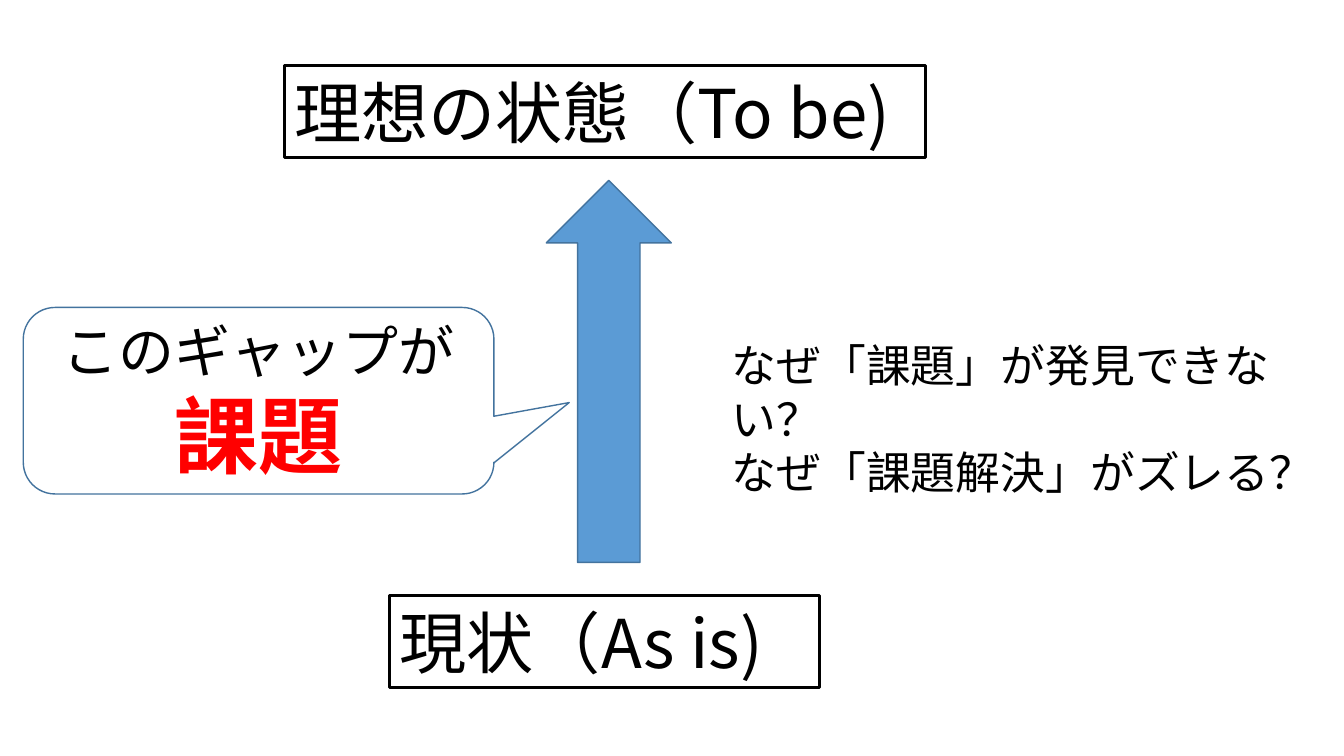
from dataclasses import dataclass

from pptx import Presentation
from pptx.dml.color import RGBColor
from pptx.enum.shapes import MSO_SHAPE as Shape
from pptx.enum.text import MSO_ANCHOR as Anchor, MSO_AUTO_SIZE as AutoSize, PP_ALIGN as Align
from pptx.util import Inches, Pt

SLIDE_WIDTH, SLIDE_HEIGHT = Inches(13.33), Inches(7.5)
STATE_CENTRE, STATE_HEIGHT = 45, 12.13


@dataclass(frozen=True)
class Theme:
    """Colours, fonts and type sizes of the slide."""
    ink: str = "000000"
    accent: str = "FF0000"
    arrow: str = "5B9BD5"
    outline: str = "43739E"
    japanese: str = "Noto Sans CJK JP"
    latin: str = "Calibri"
    state: int = 48
    gap: int = 40
    issue: int = 60
    question: int = 32


THEME = Theme()


def place(left, top, width, height):
    """Turn percentages of the slide into lengths."""
    return (int(SLIDE_WIDTH * left / 100), int(SLIDE_HEIGHT * top / 100),
            int(SLIDE_WIDTH * width / 100), int(SLIDE_HEIGHT * height / 100))


def add_outlined(slide, kind, area, line, weight, fill=None):
    """Add a flat shape with an outline and an optional fill."""
    outlined = slide.shapes.add_shape(kind, *place(*area))
    outlined.shadow.inherit = False
    outlined.line.color.rgb = RGBColor.from_string(line)
    outlined.line.width = Pt(weight)
    if fill:
        outlined.fill.solid()
        outlined.fill.fore_color.rgb = RGBColor.from_string(fill)
    else:
        outlined.fill.background()
    return outlined


def write(frame, lines, font, align=Align.LEFT, anchor=Anchor.MIDDLE):
    """Write one paragraph per (wording, size, colour, bold) line."""
    frame.word_wrap = True
    frame.vertical_anchor = anchor
    for index, (wording, size, colour, bold) in enumerate(lines):
        paragraph = frame.add_paragraph() if index else frame.paragraphs[0]
        paragraph.text = wording
        paragraph.alignment = align
        paragraph.font.name = font
        paragraph.font.size = Pt(size)
        paragraph.font.bold = bold
        paragraph.font.color.rgb = RGBColor.from_string(colour)


def add_state(slide, wording, top, width):
    """Add a boxed state on the common centre line."""
    area = (STATE_CENTRE - width / 2, top, width, STATE_HEIGHT)
    state = add_outlined(slide, Shape.RECTANGLE, area, THEME.ink, 2)
    write(state.text_frame, [(wording, THEME.state, THEME.ink, False)], THEME.japanese)
    state.text_frame.auto_size = AutoSize.SHAPE_TO_FIT_TEXT


def add_gap_callout(slide, area):
    """Add the callout that points at the gap."""
    callout = add_outlined(slide, Shape.ROUNDED_RECTANGULAR_CALLOUT, area, THEME.outline, 1)
    for index, value in enumerate((0.66, 0.01, 0.17)):
        callout.adjustments[index] = value
    write(callout.text_frame,
          [("このギャップが", THEME.gap, THEME.ink, False),
           ("課題", THEME.issue, THEME.accent, True)],
          THEME.japanese, Align.CENTER)


def add_questions(slide, area, questions):
    """Add the open questions beside the arrow."""
    box = slide.shapes.add_textbox(*place(*area))
    write(box.text_frame,
          [(question, THEME.question, THEME.ink, False) for question in questions],
          THEME.latin, anchor=Anchor.TOP)
    box.text_frame.auto_size = AutoSize.SHAPE_TO_FIT_TEXT


def main():
    """Build the slide and save it."""
    deck = Presentation()
    deck.slide_width, deck.slide_height = SLIDE_WIDTH, SLIDE_HEIGHT
    slide = deck.slides.add_slide(deck.slide_layouts[6])
    add_state(slide, "理想の状態（To be)", top=8.67, width=47.7)
    add_state(slide, "現状（As is)", top=78.8, width=32.02)
    add_outlined(slide, Shape.UP_ARROW, (40.65, 23.87, 9.3, 50.53),
                 THEME.outline, 1, THEME.arrow)
    add_gap_callout(slide, (1.73, 40.67, 35.02, 24.67))
    add_questions(slide, (53.7, 44, 44.55, 15.73),
                  ["なぜ「課題」が発見できない？", "なぜ「課題解決」がズレる？"])
    deck.save("out.pptx")


if __name__ == "__main__":
    main()
